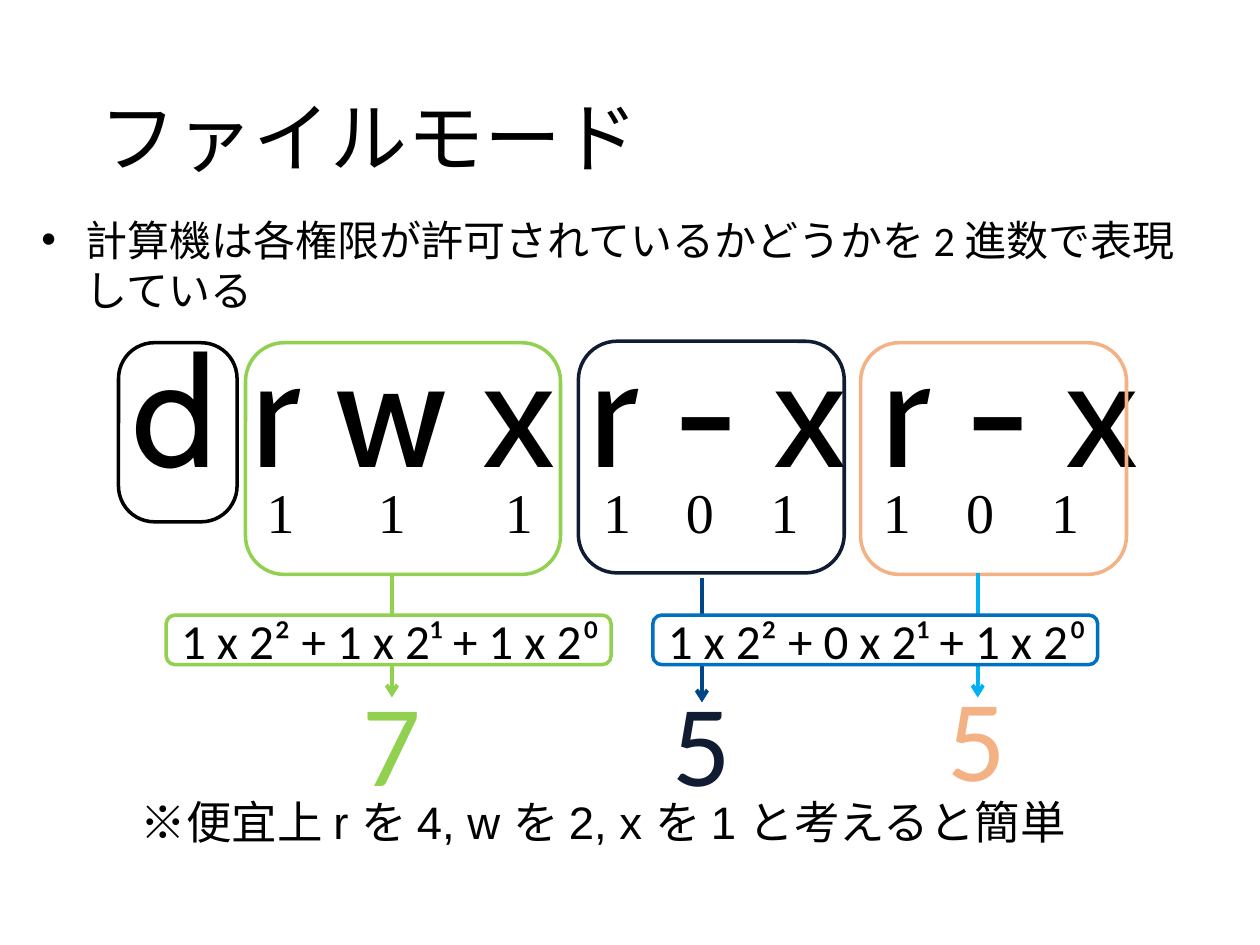
from lxml.etree import SubElement
from pptx import Presentation
from pptx.dml.color import RGBColor
from pptx.enum.shapes import MSO_CONNECTOR, MSO_SHAPE
from pptx.enum.text import MSO_ANCHOR, MSO_AUTO_SIZE, PP_ALIGN
from pptx.oxml.ns import qn
from pptx.util import Cm, Pt

BLACK, WHITE = "000000", "FFFFFF"
GREEN, NAVY, PEACH = "92D050", "101C32", "F4B183"


def rgb(value):
    return RGBColor.from_string(value)


def apply(obj, values):
    for name, value in values.items():
        setattr(obj, name, value)


class SlideBuilder:
    line_width = Pt(2)

    def __init__(self, slide):
        self.s = slide

    def fill_text(self, tf, text, font, size, color=BLACK, wrap=True, **para):
        apply(tf, {"word_wrap": wrap, "auto_size": MSO_AUTO_SIZE.NONE})
        p = tf.paragraphs[0]
        apply(p, {"alignment": PP_ALIGN.LEFT, **para})
        r = p.add_run()
        r.text = text
        apply(r.font, {"name": font, "size": Pt(size)})
        r.font.color.rgb = rgb(color)
        return p

    def placeholder(self, index, box, text, size, **para):
        sp = self.s.placeholders[index]
        apply(sp, dict(zip(("left", "top", "width", "height"), map(Cm, box))))
        return self.fill_text(sp.text_frame, text, "Calibri", size, **para)

    def text(self, box, text, font, size, **options):
        sp = self.s.shapes.add_textbox(*map(Cm, box))
        return self.fill_text(sp.text_frame, text, font, size, **options)

    def frame(self, box, color, radius, fill=None):
        sp = self.s.shapes.add_shape(MSO_SHAPE.ROUNDED_RECTANGLE, *map(Cm, box))
        sp.adjustments[0] = radius
        sp.shadow.inherit = False
        if fill:
            sp.fill.solid()
            sp.fill.fore_color.rgb = rgb(fill)
        else:
            sp.fill.background()
        sp.line.color.rgb = rgb(color)
        sp.line.width = self.line_width
        return sp

    def formula(self, left, text, color):
        sp = self.frame((left, 12.4, 8.97, 1), color, 0.18, WHITE)
        sp.text_frame.vertical_anchor = MSO_ANCHOR.MIDDLE
        self.fill_text(sp.text_frame, text, "Calibri", 28, wrap=False)

    def arrow(self, x, top, color):
        sp = self.s.shapes.add_connector(
            MSO_CONNECTOR.STRAIGHT, Cm(x), Cm(top), Cm(x), Cm(top + 2.5))
        sp.line.color.rgb = rgb(color)
        sp.line.width = Pt(2.27)
        spPr = sp._element.spPr
        SubElement(spPr.find(qn("a:ln")), qn("a:tailEnd"), type="arrow")
        SubElement(spPr, qn("a:effectLst"))

    def tabs(self, p, stops):
        tab_list = SubElement(p._p.get_or_add_pPr(), qn("a:tabLst"))
        for stop in stops:
            SubElement(tab_list, qn("a:tab"), pos=str(Cm(stop)), algn="ctr")

    def indent(self, p, margin, first=0):
        pPr = p._p.get_or_add_pPr()
        pPr.set("marL", str(Cm(margin)))
        pPr.set("indent", str(Cm(first)))
        return pPr


def main():
    prs = Presentation()
    prs.slide_width, prs.slide_height = Cm(25.4), Cm(19.05)
    b = SlideBuilder(prs.slides.add_slide(prs.slide_layouts[1]))

    b.placeholder(0, (1.75, 1.02, 21.9, 3.68), "ファイルモード", 44, line_spacing=0.9)
    p = b.placeholder(
        1, (0.58, 4.19, 23.5, 2.95),
        "計算機は各権限が許可されているかどうかを 2 進数で表現している",
        24, space_before=Pt(8))
    SubElement(b.indent(p, 0.89, -0.89), qn("a:buChar"), char="•")

    b.text((1.98, 6.2, 21.64, 4.32), "d r w x r - x r - x", "Cabin", 88,
           wrap=False, alignment=PP_ALIGN.CENTER)
    for left, top, width, color in ((4.95, 6.91, 6.35, GREEN),
                                    (11.66, 6.88, 5.36, NAVY),
                                    (17.35, 6.91, 5.36, PEACH)):
        b.frame((left, top, width, 4.67), color, 0.167)
    b.frame((2.39, 6.91, 2.39, 3.61), BLACK, 0.302)

    for left, top, digit, color in ((7.06, 13.41, "7", GREEN),
                                    (13.31, 13.41, "5", NAVY),
                                    (18.85, 13.31, "5", PEACH)):
        b.text((left, top, 1.7, 3.3), digit, "Calibri", 66, color=color, wrap=False)

    bits = b.text((4.57, 9.5, 18.34, 1.6), "".join(f"\t{bit}" for bit in "111101101"),
                  "Times New Roman", 32)
    b.tabs(bits, (0.84, 3.08, 5.64, 7.62, 9.29, 11, 13.26, 14.94, 16.65))

    for x, top, color in ((7.9, 11.56, GREEN), (19.71, 11.56, "00B0F0"),
                          (14.15, 11.66, "004586")):
        b.arrow(x, top, color)
    b.formula(3.35, "1 x 2² + 1 x 2¹ + 1 x 2⁰", GREEN)
    b.formula(13.16, "1 x 2² + 0 x 2¹ + 1 x 2⁰", "0070C0")

    note = b.text((1.32, 15.88, 21.1, 1.37),
                  "※便宜上 r を 4, w を 2, x を 1 と考えると簡単", "Arial", 26)
    b.indent(note, 1.27)

    prs.save("out.pptx")


if __name__ == "__main__":
    main()
